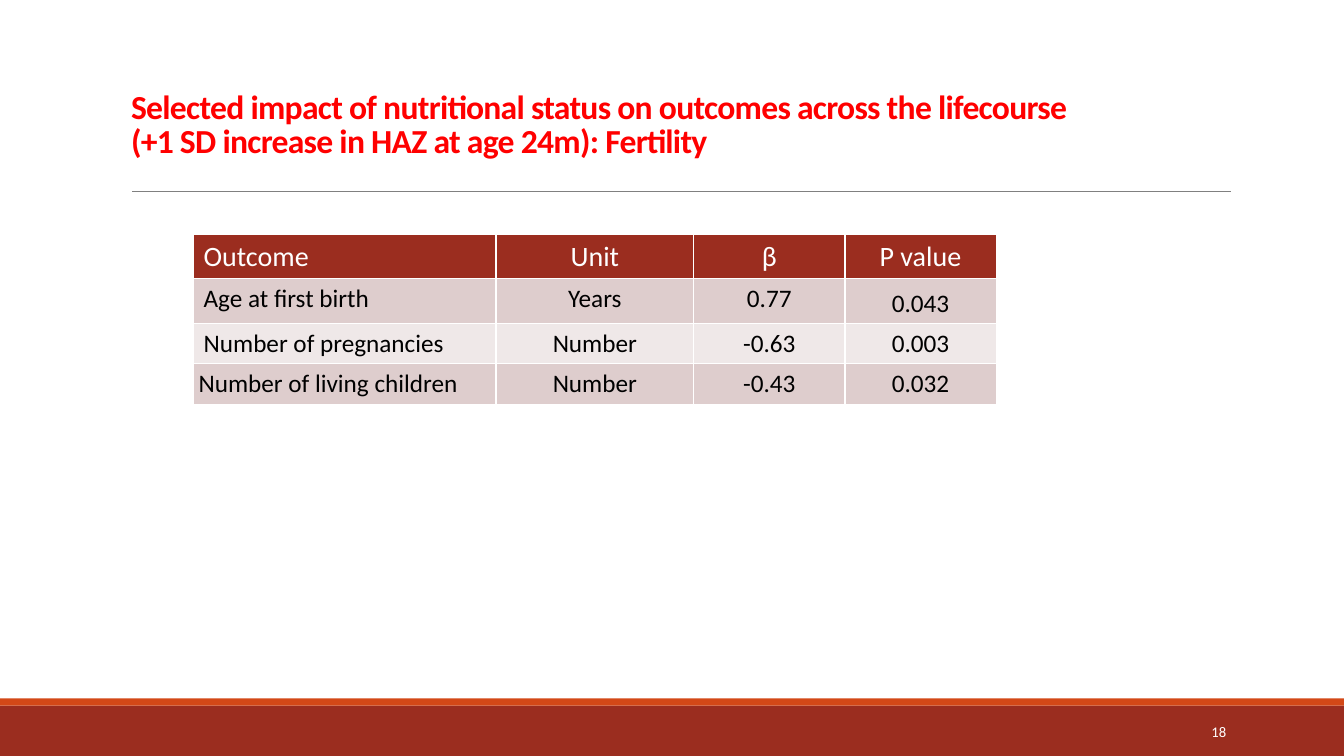
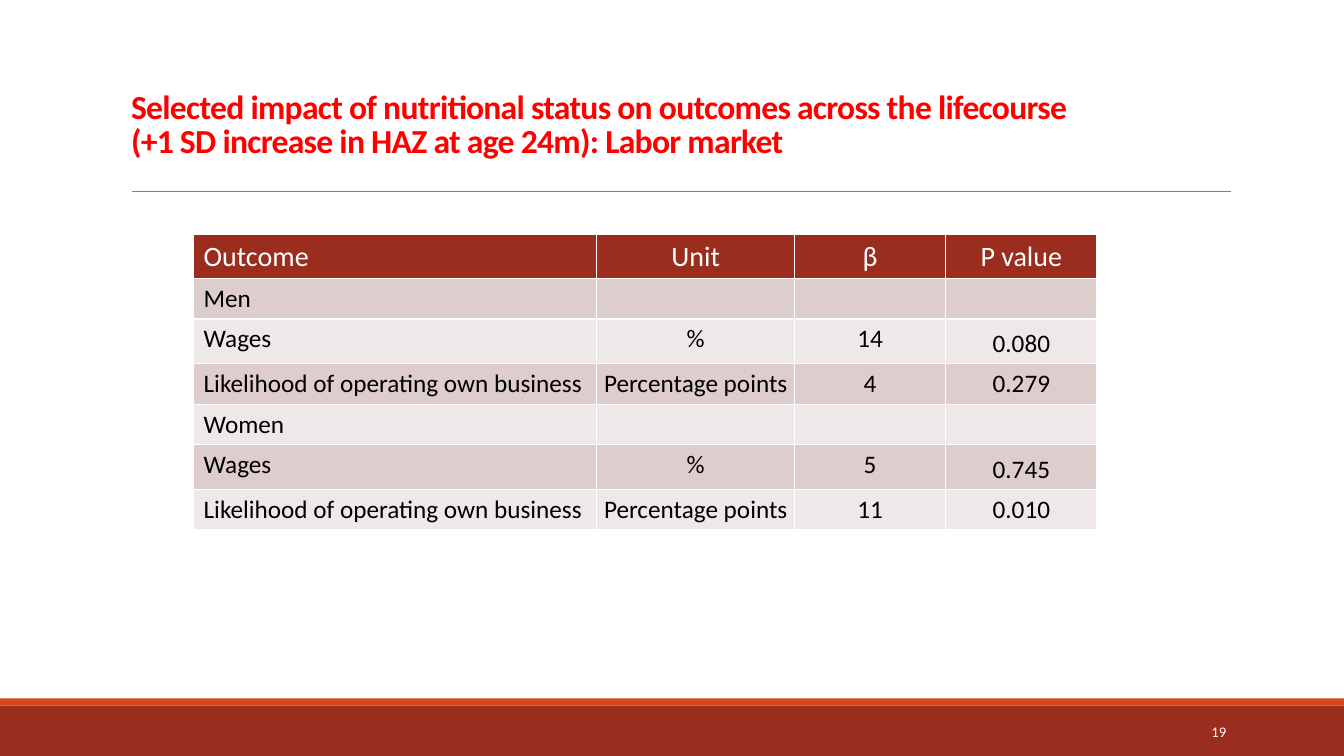
"""Build two slides on nutritional status and later outcomes, each with one table."""
from lxml import etree
from pptx import Presentation
from pptx.dml.color import RGBColor
from pptx.enum.shapes import MSO_CONNECTOR, MSO_SHAPE
from pptx.enum.text import MSO_ANCHOR, MSO_AUTO_SIZE, PP_ALIGN
from pptx.oxml.ns import qn
from pptx.util import Inches, Pt

LEFT, CENTER, RIGHT = PP_ALIGN.LEFT, PP_ALIGN.CENTER, PP_ALIGN.RIGHT
BOTTOM, MIDDLE = MSO_ANCHOR.BOTTOM, MSO_ANCHOR.MIDDLE
RECT, STRAIGHT = MSO_SHAPE.RECTANGLE, MSO_CONNECTOR.STRAIGHT
NO_FIT = MSO_AUTO_SIZE.NONE

FONT = "Calibri"
WHITE, BLACK, RED, GRAY = "FFFFFF", "000000", "FF0000", "808080"
BRICK, ORANGE = "9B2D1F", "D34817"
TINTS = ("DECDCD", "EFE8E8")
WIDTH, HEIGHT = 13.33, 7.5
BANDS = [(7, 0.5, BRICK), (6.93, 0.07, ORANGE)]

LEAD = "Selected impact of nutritional status on outcomes across the lifecourse"
SCOPE = "(+1 SD increase in HAZ at age 24m): "
HEADS = ("Outcome", "Unit", "β", "P value")
WIDTHS = (1.96, 1.5, 1.5)

# Cell style codes: p is plain, l is loose line spacing, t is loose with tight margins.
SLIDES = [
    {"topic": "Fertility", "page": 18, "first": 3, "rows": [
        (("Age at first birth", "Years", "0.77", "0.043"), "pptl"),
        (("Number of pregnancies", "Number", "-0.63", "0.003"), "pttp"),
        (("Number of living children", "Number", "-0.43", "0.032"), "tttt"),
    ]},
    {"topic": "Labor market", "page": 19, "first": 4, "rows": [
        (("Men", "", "", ""), "pppp"),
        (("Wages", "%", "14", "0.080"), "pptl"),
        (("Likelihood of operating own business", "Percentage points", "4", "0.279"), "pttp"),
        (("Women", "", "", ""), "pppp"),
        (("Wages", "%", "5", "0.745"), "pttl"),
        (("Likelihood of operating own business", "Percentage points", "11", "0.010"), "pttp"),
    ]},
]


def color(code):
    return RGBColor.from_string(code)


def paint(fill, code):
    fill.solid()
    fill.fore_color.rgb = color(code)


def write(para, text, size, code, bold=False):
    run = para.add_run()
    run.text = text
    font = run.font
    font.name, font.size, font.bold = FONT, Pt(size), bold
    font.color.rgb = color(code)
    return run


def add_frame(slide, page):
    for top, height, code in BANDS:
        band = slide.shapes.add_shape(RECT, 0, Inches(top), Inches(WIDTH), Inches(height))
        band.shadow.inherit = False
        paint(band.fill, code)
        band.line.fill.background()
    rule = slide.shapes.add_connector(
        STRAIGHT, Inches(1.31), Inches(1.9), Inches(12.21), Inches(1.9))
    rule.line.width = Pt(0.5)
    rule.line.color.rgb = color(GRAY)
    etree.SubElement(rule.element.spPr, qn("a:effectLst"))
    box = slide.shapes.add_textbox(Inches(10.83), Inches(7.06), Inches(1.43), Inches(0.4))
    frame = box.text_frame
    frame.word_wrap, frame.vertical_anchor = True, MIDDLE
    para = frame.paragraphs[0]
    para.alignment = RIGHT
    write(para, str(page), 10.5, WHITE)


def set_title(slide, topic):
    title = slide.shapes.title
    title.left, title.top = Inches(1.2), Inches(0.31)
    title.width, title.height = Inches(11), Inches(1.59)
    frame = title.text_frame
    frame.auto_size, frame.vertical_anchor = NO_FIT, BOTTOM
    frame.margin_bottom = Inches(0.31)
    para = frame.paragraphs[0]
    para.alignment, para.line_spacing = LEFT, 0.85
    lead = write(para, LEAD, 24, RED, True)
    para.add_line_break()
    scope = write(para, SCOPE + topic, 24, RED, True)
    for run in (lead, scope):
        run.font._element.set("spc", "-50")


def edge(cell):
    props = cell._tc.get_or_add_tcPr()
    for side in ("lnL", "lnR", "lnT", "lnB"):
        line = etree.SubElement(props, qn("a:" + side), w=str(Pt(1)))
        solid = etree.SubElement(line, qn("a:solidFill"))
        etree.SubElement(solid, qn("a:srgbClr"), val=WHITE)


def fill_cell(cell, text, style, align, size, code, back):
    edge(cell)
    paint(cell.fill, back)
    para = cell.text_frame.paragraphs[0]
    para.alignment = align
    if style != "p":
        para.line_spacing = 1.15
    if style == "t":
        cell.margin_left = cell.margin_right = Inches(0.05)
        cell.margin_top = cell.margin_bottom = 0
    if text:
        write(para, text, size, code)
    else:
        para.font.size = Pt(size)


def add_grid(slide, first, rows):
    widths = (first, *WIDTHS)
    lines = [(HEADS, "pppp"), *rows]
    shape = slide.shapes.add_table(
        len(lines), len(widths), Inches(1.92), Inches(2.33),
        Inches(sum(widths)), Inches(0.4 * len(lines)))
    table = shape.table
    for col, width in zip(table.columns, widths):
        col.width = Inches(width)
    for i, (texts, styles) in enumerate(lines):
        table.rows[i].height = Inches(0.4)
        look = (18, BLACK, TINTS[(i - 1) % 2]) if i else (20, WHITE, BRICK)
        for j, (text, style) in enumerate(zip(texts, styles)):
            fill_cell(table.cell(i, j), text, style, CENTER if j else LEFT, *look)


def main():
    deck = Presentation()
    deck.slide_width, deck.slide_height = Inches(WIDTH), Inches(HEIGHT)
    for item in SLIDES:
        slide = deck.slides.add_slide(deck.slide_layouts[5])
        add_frame(slide, item["page"])
        set_title(slide, item["topic"])
        add_grid(slide, item["first"], item["rows"])
    deck.save("out.pptx")


if __name__ == "__main__":
    main()
